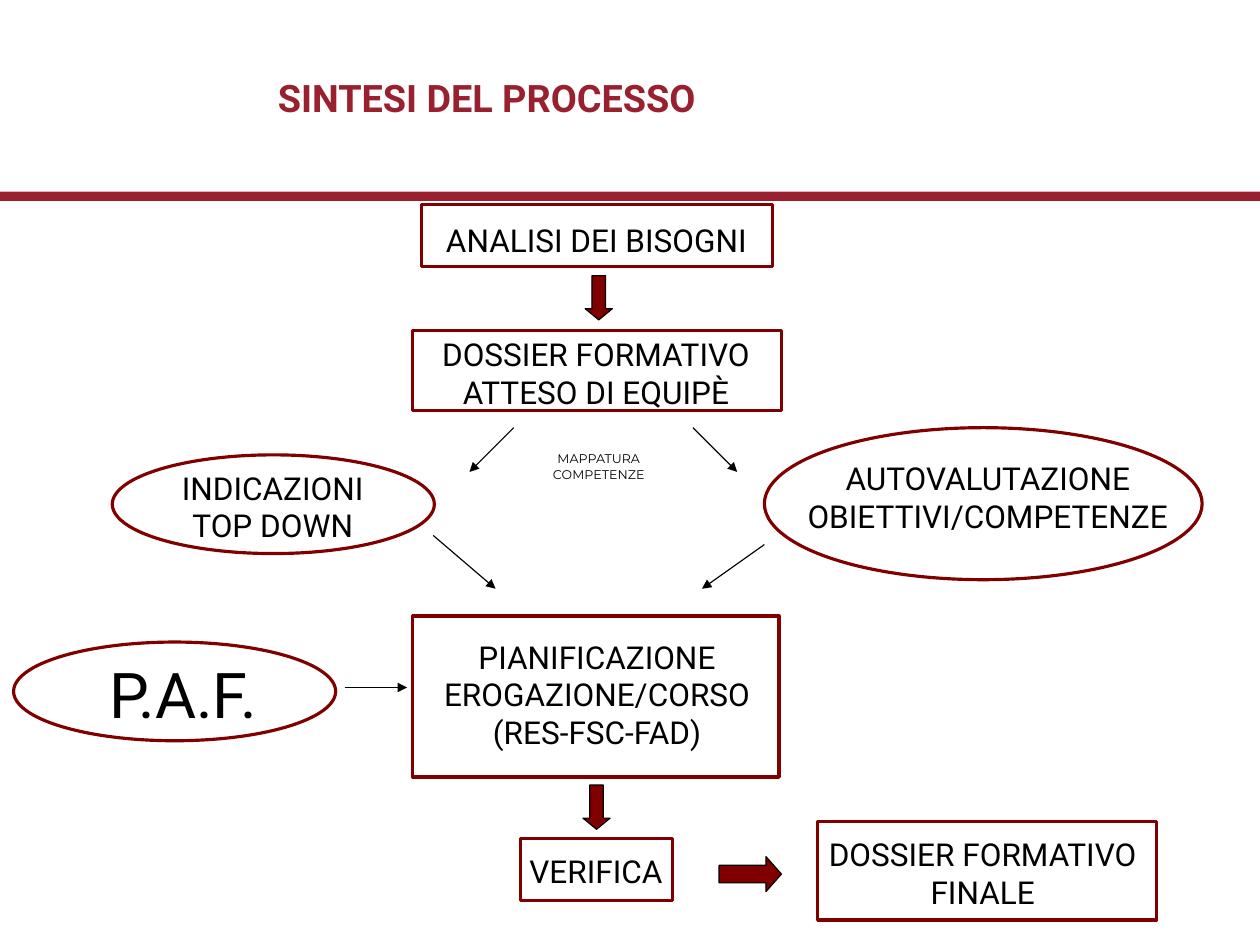
from lxml.etree import SubElement
from pptx import Presentation
from pptx.dml.color import RGBColor
from pptx.enum.shapes import MSO_CONNECTOR, MSO_SHAPE
from pptx.enum.text import MSO_ANCHOR, PP_ALIGN
from pptx.oxml.ns import qn
from pptx.util import Emu, Pt

SCALE = 9144


def px(n):
    return Emu(n * SCALE)


def color(hex_value):
    return RGBColor.from_string(hex_value)


class ProcessSlide:
    """Style and drawing methods for one flow-chart slide."""

    font = "Roboto"
    accent = "99212F"
    dark_red = "800000"
    black = "000000"

    def __init__(self, prs):
        self.s = prs.slides.add_slide(prs.slide_layouts[5])

    def set_text(self, sp, lines, size, align, anchor, hex_value, bold=False, font=None, inset=4):
        tf = sp.text_frame
        tf.text = "\n".join(lines)
        tf.vertical_anchor = anchor
        tf.margin_left = tf.margin_right = tf.margin_top = tf.margin_bottom = px(inset)
        for p in tf.paragraphs:
            p.alignment = align
            for r in p.runs:
                r.font.name = font or self.font
                r.font.size = Pt(size)
                r.font.bold = bold
                r.font.color.rgb = color(hex_value)

    def title(self, text, x, y, w, h):
        sp = self.s.shapes.title
        sp.left, sp.top, sp.width, sp.height = map(px, (x, y, w, h))
        self.set_text(sp, [text], 24, PP_ALIGN.LEFT, MSO_ANCHOR.MIDDLE, self.accent, bold=True)

    def label(self, lines, x, y, w, h, size=20, anchor=MSO_ANCHOR.TOP, font=None, inset=4, wrap=True):
        sp = self.s.shapes.add_textbox(*map(px, (x, y, w, h)))
        sp.text_frame.word_wrap = wrap
        self.set_text(sp, lines, size, PP_ALIGN.CENTER, anchor, self.black, font=font, inset=inset)

    def shape(self, kind, x, y, w, h, fill=None, line=None, weight=2.0):
        sp = self.s.shapes.add_shape(kind, *map(px, (x, y, w, h)))
        sp.shadow.inherit = False
        if fill:
            sp.fill.solid()
            sp.fill.fore_color.rgb = color(fill)
        else:
            sp.fill.background()
        if line:
            sp.line.color.rgb = color(line)
            sp.line.width = Pt(weight)
        else:
            sp.line.fill.background()
        return sp

    def outline(self, kind, x, y, w, h):
        self.shape(kind, x, y, w, h, line=self.dark_red)

    def block_arrow(self, kind, x, y, w, h, head):
        sp = self.shape(kind, x, y, w, h, self.dark_red, self.black, 0.75)
        sp.adjustments[0] = 0.5
        sp.adjustments[1] = head

    def arrow(self, x1, y1, x2, y2):
        c = self.s.shapes.add_connector(MSO_CONNECTOR.STRAIGHT, *map(px, (x1, y1, x2, y2)))
        c.line.color.rgb = color(self.black)
        c.line.width = Pt(0.75)
        properties = c._element.spPr
        SubElement(properties.find(qn("a:ln")), qn("a:tailEnd"), type="triangle")
        SubElement(properties, qn("a:effectLst"))


def main():
    prs = Presentation()
    prs.slide_width, prs.slide_height = px(1111), px(833)
    slide = ProcessSlide(prs)

    slide.shape(MSO_SHAPE.RECTANGLE, 0, 169, 1111, 8, fill=slide.accent)
    slide.title("SINTESI DEL PROCESSO", 241, 23, 441, 126)

    for box in (
        (372, 180, 309, 55),
        (364, 291, 325, 71),
        (364, 543, 323, 142),
        (459, 739, 134, 55),
        (721, 724, 299, 87),
    ):
        slide.outline(MSO_SHAPE.RECTANGLE, *box)
    for box in ((99, 401, 284, 87), (674, 377, 386, 134), (12, 566, 284, 87)):
        slide.outline(MSO_SHAPE.OVAL, *box)

    slide.label(["ANALISI DEI BISOGNI"], 384, 188, 284, 47, anchor=MSO_ANCHOR.MIDDLE)
    for lines, box in (
        (["DOSSIER FORMATIVO ATTESO DI EQUIPÈ"], (368, 291, 315, 71)),
        (["INDICAZIONI", "TOP DOWN"], (83, 409, 315, 71)),
        (["AUTOVALUTAZIONE", "OBIETTIVI/COMPETENZE"], (674, 401, 394, 102)),
        (["PIANIFICAZIONE", "EROGAZIONE/CORSO (RES-FSC-FAD)"], (365, 558, 323, 102)),
        (["VERIFICA"], (431, 747, 189, 31)),
        (["DOSSIER FORMATIVO FINALE"], (721, 732, 291, 71)),
    ):
        slide.label(lines, *box)
    slide.label(["P.A.F."], 4, 574, 315, 71, size=40)
    slide.label(["MAPPATURA", "COMPETENZE"], 406, 393, 244, 94, size=8,
                font="Montserrat", inset=5, wrap=False)

    slide.block_arrow(MSO_SHAPE.DOWN_ARROW, 516, 243, 24, 39, 0.41)
    slide.block_arrow(MSO_SHAPE.DOWN_ARROW, 514, 692, 24, 39, 0.41)
    slide.block_arrow(MSO_SHAPE.RIGHT_ARROW, 634, 755, 55, 31, 0.44)

    for ends in (
        (453, 377, 414, 416),
        (611, 377, 650, 416),
        (382, 472, 437, 519),
        (674, 480, 619, 519),
        (304, 606, 359, 606),
    ):
        slide.arrow(*ends)

    prs.save("out.pptx")


if __name__ == "__main__":
    main()
